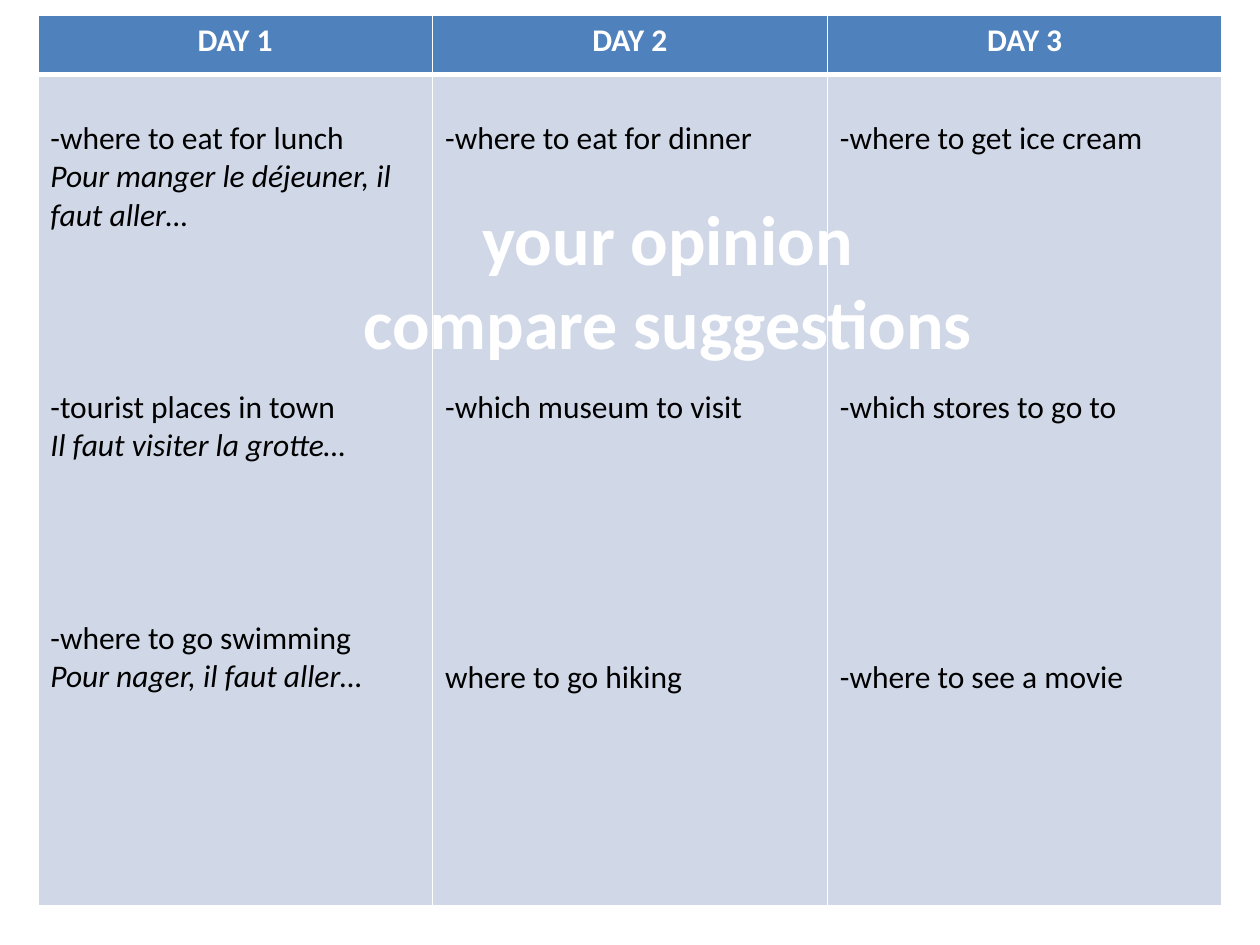
from dataclasses import dataclass

from lxml import etree
from pptx import Presentation
from pptx.dml.color import RGBColor
from pptx.enum.text import MSO_AUTO_SIZE, PP_ALIGN
from pptx.oxml.ns import qn
from pptx.util import Inches, Pt

CENTER, LEFT = PP_ALIGN.CENTER, PP_ALIGN.LEFT
GROW = MSO_AUTO_SIZE.SHAPE_TO_FIT_TEXT


@dataclass(frozen=True)
class Theme:
    """Colours, font and sizes of the deck."""
    font: str = "Calibri"
    white: str = "FFFFFF"
    black: str = "000000"
    header: str = "4F81BD"
    body: str = "D0D8E8"
    text_size: int = 18
    title_size: int = 40
    line_height: int = 22
    thin: int = 1
    thick: int = 3


@dataclass(frozen=True)
class Line:
    """A paragraph, with the number of empty lines above it."""
    text: str
    gap: int = 0
    italic: bool = False


class Planner:
    """Builds the slide; lengths are shares of the slide's size."""

    def __init__(self, deck, theme):
        """Open a blank page in the deck."""
        self.deck, self.theme = deck, theme
        self.page = deck.slides.add_slide(deck.slide_layouts[6])

    def area(self, left, top, width, height):
        """Turn shares into slide lengths."""
        across, down = self.deck.slide_width, self.deck.slide_height
        return (round(left * across), round(top * down),
                round(width * across), round(height * down))

    def add_lines(self, frame, lines, size, color, bold=False, align=LEFT):
        """Fill a text frame with one paragraph per line."""
        for index, line in enumerate(lines):
            para = frame.add_paragraph() if index else frame.paragraphs[0]
            para.alignment = align
            para.space_before = Pt(line.gap * self.theme.line_height)
            span = para.add_run()
            span.text = line.text
            font = span.font
            font.name, font.size = self.theme.font, Pt(size)
            font.bold, font.italic = bold, line.italic
            font.color.rgb = RGBColor.from_string(color)

    def paint(self, cell, fill, top, bottom):
        """Give a cell its fill and white borders."""
        cell.fill.solid()
        cell.fill.fore_color.rgb = RGBColor.from_string(fill)
        properties = cell._tc.get_or_add_tcPr()
        widths = {"L": self.theme.thin, "R": self.theme.thin, "T": top, "B": bottom}
        for index, (side, width) in enumerate(widths.items()):
            border = etree.Element(qn(f"a:ln{side}"), w=str(Pt(width)))
            solid = etree.SubElement(border, qn("a:solidFill"))
            etree.SubElement(solid, qn("a:srgbClr"), val=self.theme.white)
            properties.insert(index, border)

    def table(self, area, header_share, days):
        """Add a table with one column per day."""
        theme = self.theme
        left, top, width, height = self.area(*area)
        table = self.page.shapes.add_table(2, len(days), left, top, width, height).table
        table.rows[0].height = round(height * header_share)
        table.rows[1].height = height - table.rows[0].height
        for column, (day, lines) in enumerate(days.items()):
            header, body = table.cell(0, column), table.cell(1, column)
            self.paint(header, theme.header, theme.thin, theme.thick)
            self.paint(body, theme.body, theme.thick, theme.thin)
            body.margin_top = Inches(0.05) + Pt(theme.line_height)
            self.add_lines(header.text_frame, [Line(day)], theme.text_size,
                           theme.white, True, CENTER)
            self.add_lines(body.text_frame, lines, theme.text_size, theme.black)

    def heading(self, area, lines):
        """Add large centred text that does not wrap."""
        frame = self.page.shapes.add_textbox(*self.area(*area)).text_frame
        frame.word_wrap, frame.auto_size = False, GROW
        self.add_lines(frame, lines, self.theme.title_size, self.theme.white,
                       True, CENTER)


def main():
    """Build and save the three-day plan."""
    deck = Presentation()
    deck.slide_width, deck.slide_height = Inches(10), Inches(7.5)
    days = {
        "DAY 1": [
            Line("-where to eat for lunch"),
            Line("Pour manger le déjeuner, il faut aller…", italic=True),
            Line("-tourist places in town", gap=4),
            Line("Il faut visiter la grotte…", italic=True),
            Line("-where to go swimming", gap=4),
            Line("Pour nager, il faut aller…", italic=True),
        ],
        "DAY 2": [
            Line("-where to eat for dinner"),
            Line("-which museum to visit", gap=6),
            Line("where to go hiking", gap=6),
        ],
        "DAY 3": [
            Line("-where to get ice cream"),
            Line("-which stores to go to", gap=6),
            Line("-where to see a movie", gap=6),
        ],
    }
    planner = Planner(deck, Theme())
    planner.table((0.03, 0.12 / 7.5, 0.94, 7.07 / 7.5), 0.47 / 7.07, days)
    planner.heading((0.19, 0.2, 0.68, 1.45 / 7.5),
                    [Line("your opinion"), Line("compare suggestions")])
    deck.save("out.pptx")


if __name__ == "__main__":
    main()
